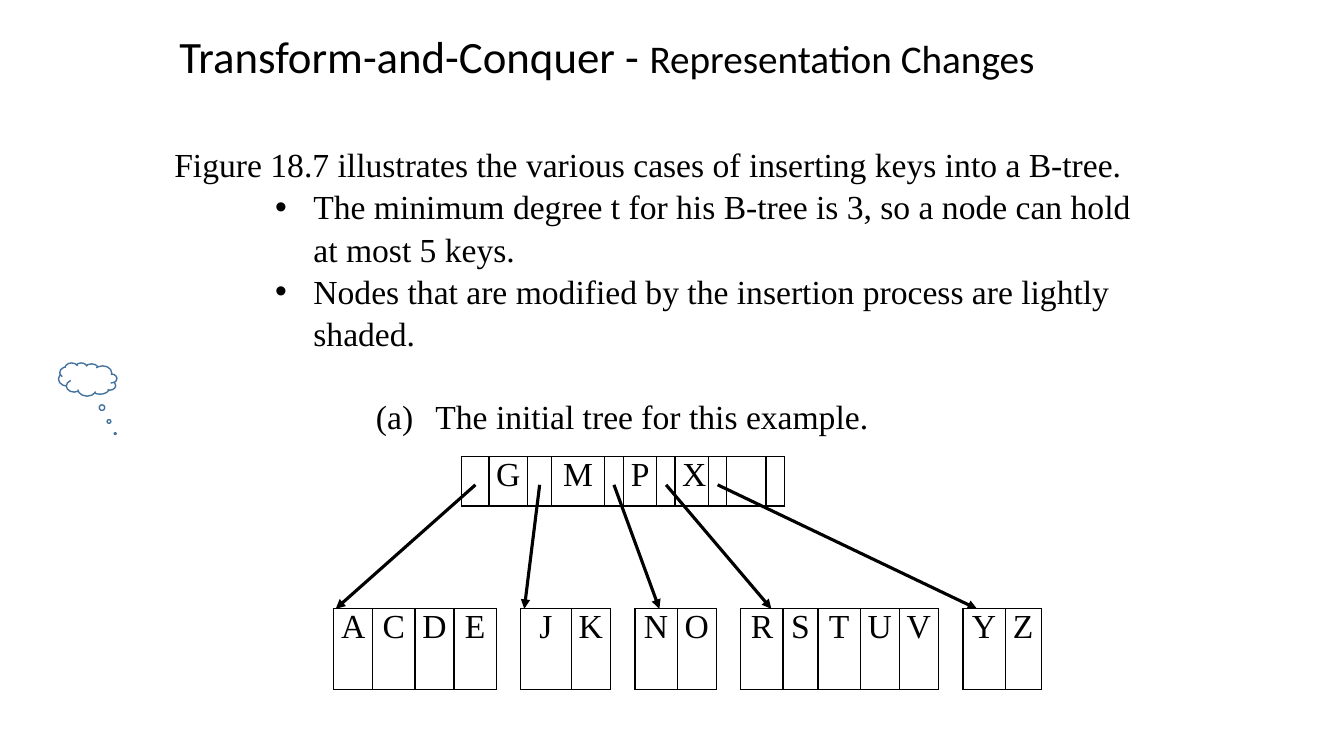
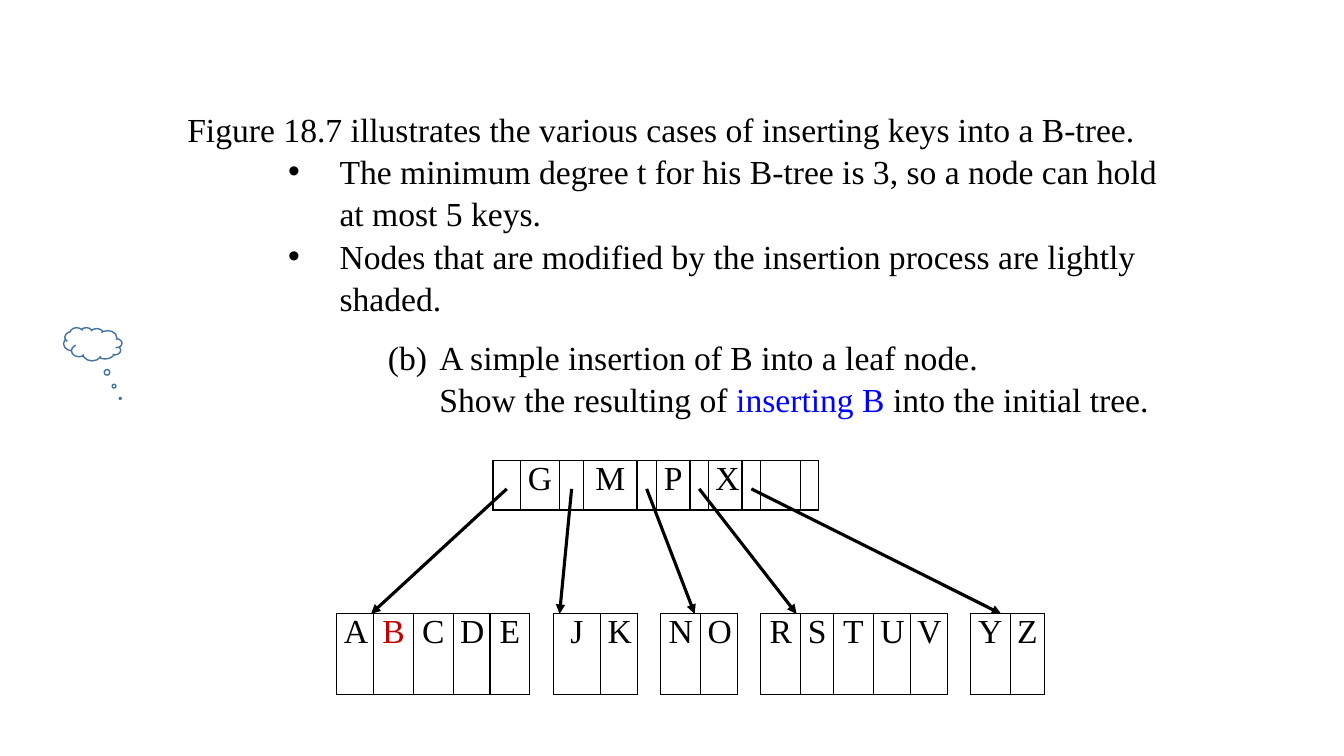
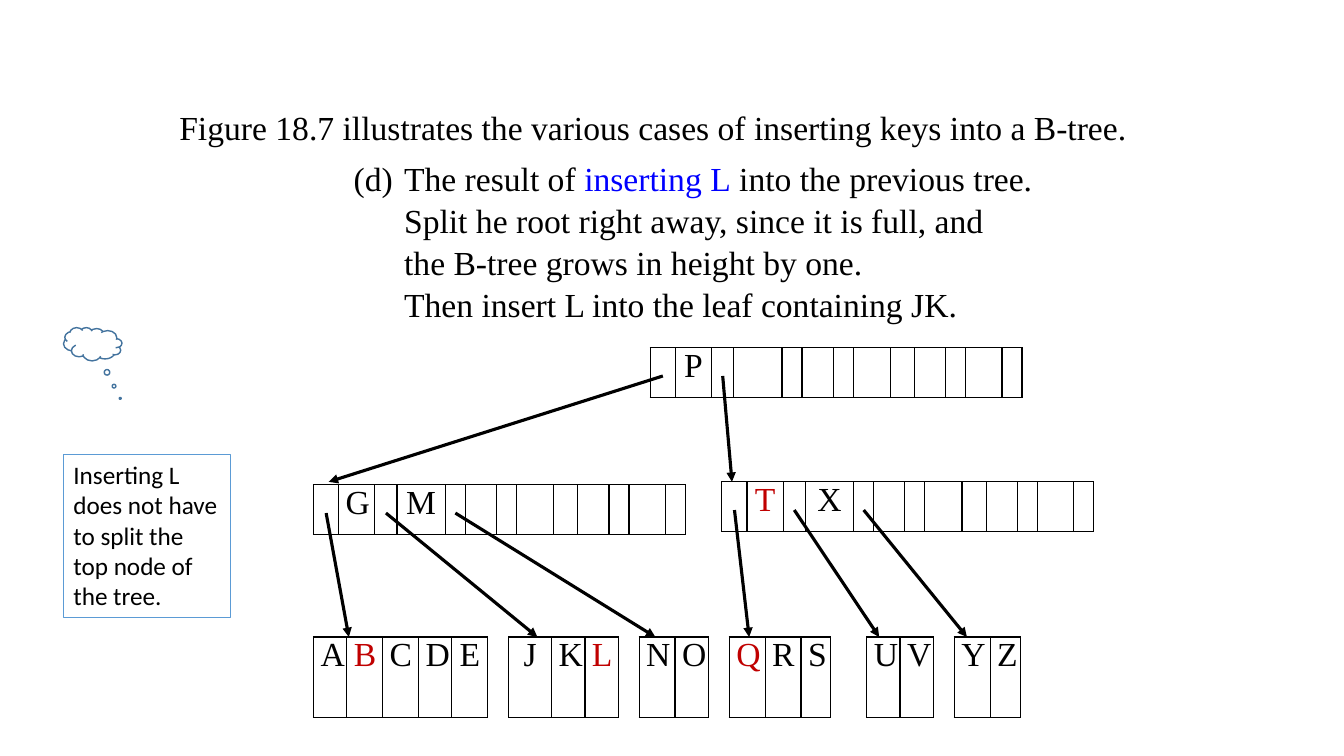
from lxml import etree
from pptx import Presentation
from pptx.dml.color import RGBColor
from pptx.enum.shapes import MSO_CONNECTOR, MSO_SHAPE
from pptx.enum.text import MSO_ANCHOR, PP_ALIGN
from pptx.oxml.ns import qn
from pptx.util import Inches, Pt

BLACK = RGBColor.from_string("000000")
WHITE = RGBColor.from_string("FFFFFF")
RED = RGBColor.from_string("C00000")
BLUE = RGBColor.from_string("0000FF")
CLOUD_LINE = RGBColor.from_string("43739E")
NOTE_LINE = RGBColor.from_string("5B9BD5")
SERIF, SANS = "Times New Roman", "Calibri"
CENTER, LEFT, TOP = PP_ALIGN.CENTER, PP_ALIGN.LEFT, MSO_ANCHOR.TOP
STRAIGHT = MSO_CONNECTOR.STRAIGHT
CLOUD, RECT = MSO_SHAPE.CLOUD_CALLOUT, MSO_SHAPE.RECTANGLE

INTRO = "Figure 18.7 illustrates the various cases of inserting keys into a B-tree."
FACTS = [
    "The minimum degree t for his B-tree is 3, so a node can hold at most 5 keys.",
    "Nodes that are modified by the insertion process are lightly shaded.",
]
NODE_H, LEAF_H, LEAVES_W = 0.49, 0.8, 7.02
POINTER_Y = 0.28  # where an arrow starts below the top of its node

# Relative column widths: inner nodes alternate pointer and key, leaves go by key
SHORT_NODE = [27, 38, 24, 52, 19, 33, 18, 33, 18, 39, 18]
LONG_NODE = [25, 36, 22, 48, 20, 31, 20, 37, 24, 31, 20, 36, 20]
KEY_WIDTH = {" ": 24, "S": 34, "Z": 35, "J": 49, **dict.fromkeys("ADKLOUV", 38)}
USUAL_KEY = 41

# fact: left margin of the bulleted facts; step: left margin and hanging of the step
# nodes: left, top, width, columns, keys, top of the children, x of each arrow's end
# leaves: " " is a gap between two leaves and "_" a wide one; bars enclose blue text
SLIDES = [
    dict(box=(1.63, 1.36, 9.85, 2.93), fact=1.38, step=(2.59, 0.59), space=29,
         letter="a", lines=["The initial tree for this example."],
         nodes=[(4.58, 4.53, 3.2, SHORT_NODE, "GMPX", 6.04,
                 [3.33, 5.2, 6.54, 7.65, 9.69])],
         leaves=(3.31, 6.04, "ACDE JK NO RSTUV YZ"), reds="", cloud=(0.58, 3.6)),
    dict(box=(1.76, 1.01, 10, 3.1), fact=1.51, step=(2.5, 0.51), space=12,
         letter="b", lines=["A simple insertion of B into a leaf node.",
                            "Show the resulting of |inserting B| into the initial tree."],
         nodes=[(4.89, 4.57, 3.23, SHORT_NODE, "GMPX", 6.09,
                 [3.68, 5.55, 6.89, 7.9, 9.93])],
         leaves=(3.34, 6.09, "ABCDE JK NO RSTUV YZ"), reds="B", cloud=(0.63, 3.25)),
    dict(box=(1.68, 0.99, 10.45, 2.2), fact=None, step=(2.23, 0.5), space=6,
         letter="d", lines=["The result of |inserting L| into the previous tree.",
                            "Split he root right away, since it is full, and",
                            "the B-tree grows in height by one.",
                            "Then insert L into the leaf containing JK."],
         nodes=[(6.45, 3.45, 3.69, LONG_NODE, "P", 4.78, [3.26, 7.26]),
                (3.11, 4.81, 3.69, LONG_NODE, "GM", 6.32, [3.46, 5.33, 6.5]),
                (7.16, 4.78, 3.69, LONG_NODE, "TX", 6.32, [7.43, 8.72, 9.59])],
         leaves=(3.11, 6.32, "ABCDE JKL NO QRS_UV YZ"), reds="BLQT",
         cloud=(0.63, 3.25)),
]


def style(r, size, name, color=BLACK):
    r.font.size, r.font.name = Pt(size), name
    r.font.color.rgb = color


def add_keys(s, left, top, width, height, weights, keys, reds, gaps=""):
    """Draw one row of keys; columns named in gaps have no top and bottom line."""
    frame = s.shapes.add_table(1, len(weights), Inches(left), Inches(top),
                               Inches(width), Inches(height))
    table = frame.table
    table.first_row = table.horz_banding = False
    for i, (weight, key) in enumerate(zip(weights, keys)):
        table.columns[i].width = Inches(width * weight / sum(weights))
        cell = table.cell(0, i)
        cell.margin_left = cell.margin_right = Inches(0.07)
        cell.margin_top = cell.margin_bottom = 0
        tcPr = cell._tc.get_or_add_tcPr()
        for side in ("lnL", "lnR", "lnT", "lnB"):
            ln = etree.SubElement(tcPr, qn("a:" + side), w=str(Pt(1)))
            if key in gaps and side in ("lnT", "lnB"):
                etree.SubElement(ln, qn("a:noFill"))
            else:
                fill = etree.SubElement(ln, qn("a:solidFill"))
                etree.SubElement(fill, qn("a:srgbClr"), val=str(BLACK))
        cell.fill.solid()
        cell.fill.fore_color.rgb = WHITE
        if key.isalpha():
            p = cell.text_frame.paragraphs[0]
            p.text, p.alignment = key, CENTER
            style(p.runs[0], 24, SERIF, RED if key in reds else BLACK)


prs = Presentation()
prs.slide_width, prs.slide_height = Inches(13.33), Inches(7.5)

for content in SLIDES:
    s = prs.slides.add_slide(prs.slide_layouts[6])

    # Paragraphs: text, left margin, hanging, bullet element and its attributes
    fact, (step, hanging) = content["fact"], content["step"]
    paragraphs = [(INTRO, 0, 0, None, {})]
    if fact:
        paragraphs += [(text, fact, fact - 1, "a:buChar", {"char": "•"}) for text in FACTS]
    last_before_step = len(paragraphs) - 1
    number = {"type": "alphaLcParenBoth", "startAt": str("abcd".index(content["letter"]) + 1)}
    first, *others = content["lines"]
    paragraphs.append((first, step, hanging, "a:buAutoNum", number))
    paragraphs += [(text, step, 0, None, {}) for text in others]

    tf = s.shapes.add_textbox(*map(Inches, content["box"])).text_frame
    tf.word_wrap = True
    for i, (text, margin, indent, bullet, attributes) in enumerate(paragraphs):
        p = tf.add_paragraph() if i else tf.paragraphs[0]
        p.line_spacing = 1.05
        p.space_after = Pt(content["space"] if i == last_before_step else 0)
        for j, part in enumerate(text.split("|")):
            r = p.add_run()
            r.text = part
            style(r, 24, SERIF, BLUE if j % 2 else BLACK)
        pPr = p._p.get_or_add_pPr()
        pPr.set("marL", str(Inches(margin)))
        pPr.set("indent", str(-Inches(indent)))
        if bullet:
            if bullet == "a:buChar":
                etree.SubElement(pPr, qn("a:buFont"), typeface="Arial")
            etree.SubElement(pPr, qn(bullet), attributes)

    # Tree: leaves, then inner nodes, then an arrow from each used pointer
    left, top, keys = content["leaves"]
    weights = [KEY_WIDTH.get(key, USUAL_KEY) for key in keys]
    add_keys(s, left, top, LEAVES_W, LEAF_H, weights, keys, content["reds"], " _")
    arrows = []
    for left, top, width, weights, keys, child_top, ends in content["nodes"]:
        cells = (" " + " ".join(keys)).ljust(len(weights))
        add_keys(s, left, top, width, NODE_H, weights, cells, content["reds"])
        for i, end_x in enumerate(ends):
            before = sum(weights[:2 * i]) + weights[2 * i] / 2
            start_x = left + width * before / sum(weights)
            arrows.append((start_x, top + POINTER_Y, end_x, child_top))
    for ends in arrows:
        arrow = s.shapes.add_connector(STRAIGHT, *map(Inches, ends))
        arrow.line.color.rgb = BLACK
        arrow.line.width = Pt(2.25)
        etree.SubElement(arrow.line._get_or_add_ln(), qn("a:tailEnd"), type="triangle")
        etree.SubElement(arrow._element.spPr, qn("a:effectLst"))

    x, y = content["cloud"]
    cloud = s.shapes.add_shape(CLOUD, Inches(x), Inches(y), Inches(0.58), Inches(0.33))
    cloud.shadow.inherit = False
    cloud.adjustments[0], cloud.adjustments[1] = -0.47, 1.63
    cloud._element.spPr.find(qn("a:xfrm")).set("flipH", "1")
    cloud.fill.solid()
    cloud.fill.fore_color.rgb = WHITE
    cloud.line.color.rgb = CLOUD_LINE
    cloud.line.width = Pt(1)

# Title of the first slide
title = prs.slides[0].shapes.add_textbox(Inches(1.68), Inches(0.24), Inches(8.98), Inches(0.64))
tf = title.text_frame
tf.word_wrap = True
for text, size in (("Transform-and-Conquer - ", 32), ("Representation Changes", 28)):
    r = tf.paragraphs[0].add_run()
    r.text = text
    style(r, size, SANS)

# Side note of the last slide
note = prs.slides[2].shapes.add_shape(RECT, Inches(0.63), Inches(4.51), Inches(1.66), Inches(1.62))
note.shadow.inherit = False
note.fill.background()
note.line.color.rgb = NOTE_LINE
note.line.width = Pt(0.75)
tf = note.text_frame
tf.word_wrap, tf.vertical_anchor = True, TOP
tf.text = "Inserting L does not have to split the top node of the tree."
p = tf.paragraphs[0]
p.alignment = LEFT
style(p.runs[0], 18, SANS)

prs.save("out.pptx")
